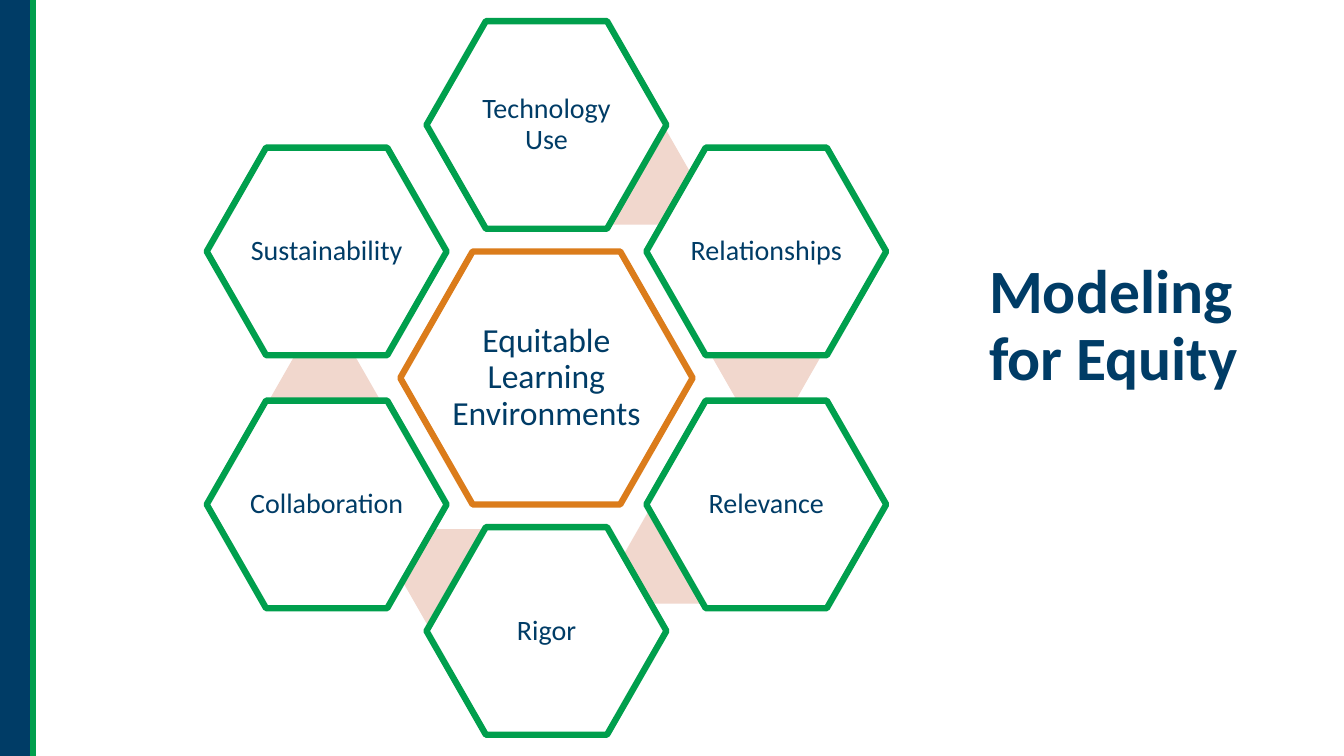
from lxml import etree
from pptx import Presentation
from pptx.dml.color import RGBColor
from pptx.enum.shapes import MSO_CONNECTOR, MSO_SHAPE
from pptx.enum.text import MSO_ANCHOR, MSO_AUTO_SIZE, PP_ALIGN
from pptx.oxml.ns import qn
from pptx.util import Inches, Pt

NAVY = RGBColor(0x00, 0x3C, 0x66)
GREEN = RGBColor(0x00, 0x9F, 0x4D)
ORANGE = RGBColor(0xDB, 0x7C, 0x1B)
BLUSH = RGBColor(0xF1, 0xD7, 0xCD)
WHITE = RGBColor(0xFF, 0xFF, 0xFF)
FONT = "Calibri"

CENTER_X, CENTER_Y = 5.42, 3.75
COLUMN_STEP, ROW_STEP = 2.18, 1.255
HUB_SIZE, HUB_TEXT_SIZE = (2.9, 2.51), (1.94, 1.68)
TOPIC_SIZE, TOPIC_TEXT_SIZE = (2.38, 2.06), (1.59, 1.38)
LINK_SIZE = (1.09, 0.94)

TOPICS = [
    ("Technology Use", 0, -2),
    ("Relationships", 1, -1),
    ("Relevance", 1, 1),
    ("Rigor", 0, 2),
    ("Collaboration", -1, 1),
    ("Sustainability", -1, -1),
]
LINK_CENTERS = [(6.33, 1.76), (7.6, 3.53), (6.72, 5.52), (4.51, 5.72), (3.22, 3.96)]


def centered_box(x, y, size):
    width, height = size
    return [Inches(v) for v in (x - width / 2, y - height / 2, width, height)]


def write_text(frame, text, size, align, bold=False):
    frame.word_wrap = True
    frame.auto_size = MSO_AUTO_SIZE.NONE
    frame.vertical_anchor = MSO_ANCHOR.MIDDLE
    paragraph = frame.paragraphs[0]
    paragraph.alignment = align
    paragraph.line_spacing = 0.9
    run = paragraph.add_run()
    run.text = text
    run.font.name = FONT
    run.font.size = Pt(size)
    run.font.bold = bold
    run.font.color.rgb = NAVY


def add_filled_shape(slide, kind, box, fill, line=None):
    shape = slide.shapes.add_shape(kind, *box)
    shape.shadow.inherit = False
    shape.fill.solid()
    shape.fill.fore_color.rgb = fill
    if line is None:
        shape.line.fill.background()
    else:
        shape.line.color.rgb = line
        shape.line.width = Pt(4.5)
    return shape


def add_hexagon(slide, x, y, size, fill, line=None):
    box = centered_box(x, y, size)
    hexagon = add_filled_shape(slide, MSO_SHAPE.HEXAGON, box, fill, line)
    hexagon.adjustments[0] = 0.286


def add_label(slide, x, y, size, text, font_size):
    frame = slide.shapes.add_textbox(*centered_box(x, y, size)).text_frame
    frame.margin_left = frame.margin_right = Inches(0.03)
    frame.margin_top = frame.margin_bottom = Inches(0.03)
    write_text(frame, text, font_size, PP_ALIGN.CENTER)


def add_side_band(slide):
    box = [Inches(v) for v in (0, 0, 0.33, 7.5)]
    add_filled_shape(slide, MSO_SHAPE.RECTANGLE, box, NAVY)
    edge = slide.shapes.add_connector(
        MSO_CONNECTOR.STRAIGHT, Inches(0.33), Inches(-0.08), Inches(0.33), Inches(7.5)
    )
    edge.line.color.rgb = GREEN
    edge.line.width = Pt(4.5)
    etree.SubElement(edge._element.spPr, qn("a:effectLst"))


def add_title(slide, text):
    title = slide.shapes.title
    title.left, title.top = Inches(9.71), Inches(1.55)
    title.width, title.height = Inches(3.45), Inches(3.39)
    write_text(title.text_frame, text, 44, PP_ALIGN.LEFT, bold=True)


def add_equity_model(slide):
    add_hexagon(slide, CENTER_X, CENTER_Y, HUB_SIZE, WHITE, ORANGE)
    add_label(slide, CENTER_X, CENTER_Y, HUB_TEXT_SIZE,
              "Equitable Learning Environments", 24)
    for x, y in LINK_CENTERS:
        add_hexagon(slide, x, y, LINK_SIZE, BLUSH)
    for text, column, row in TOPICS:
        x = CENTER_X + column * COLUMN_STEP
        y = CENTER_Y + row * ROW_STEP
        add_hexagon(slide, x, y, TOPIC_SIZE, WHITE, GREEN)
        add_label(slide, x, y, TOPIC_TEXT_SIZE, text, 20)


def main():
    presentation = Presentation()
    presentation.slide_width = Inches(13.33)
    presentation.slide_height = Inches(7.5)
    slide = presentation.slides.add_slide(presentation.slide_layouts[5])
    add_side_band(slide)
    add_title(slide, "Modeling for Equity")
    add_equity_model(slide)
    presentation.save("out.pptx")


if __name__ == "__main__":
    main()
